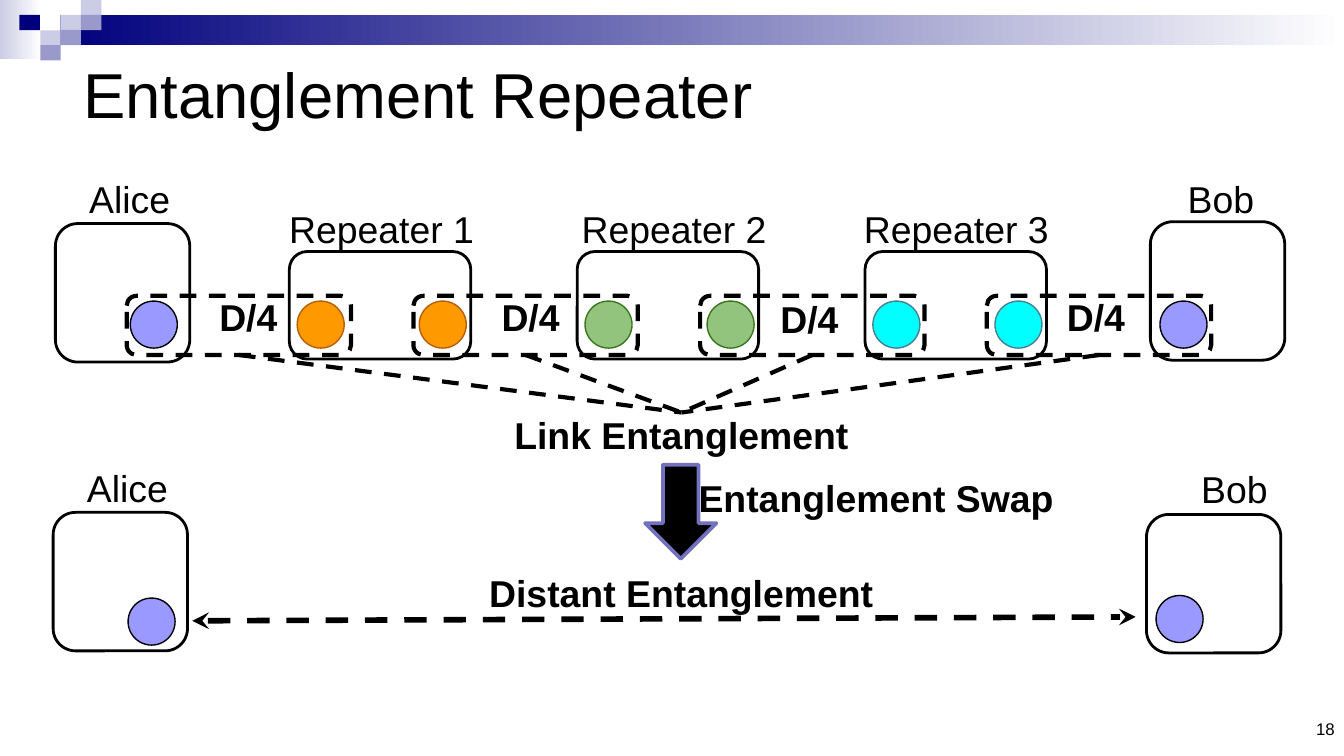
from lxml import etree
from pptx import Presentation
from pptx.dml.color import RGBColor
from pptx.enum.dml import MSO_LINE
from pptx.enum.shapes import MSO_CONNECTOR, MSO_SHAPE
from pptx.enum.text import MSO_ANCHOR, PP_ALIGN
from pptx.oxml.ns import qn
from pptx.util import Pt

RECTANGLE, ROUNDED = MSO_SHAPE.RECTANGLE, MSO_SHAPE.ROUNDED_RECTANGLE
OVAL, DOWN_ARROW = MSO_SHAPE.OVAL, MSO_SHAPE.DOWN_ARROW
STRAIGHT, DASH = MSO_CONNECTOR.STRAIGHT, MSO_LINE.DASH
LEFT, CENTER, RIGHT = PP_ALIGN.LEFT, PP_ALIGN.CENTER, PP_ALIGN.RIGHT
TOP, MIDDLE, BOTTOM = MSO_ANCHOR.TOP, MSO_ANCHOR.MIDDLE, MSO_ANCHOR.BOTTOM

BLACK = RGBColor(0x00, 0x00, 0x00)
WHITE = RGBColor(0xFF, 0xFF, 0xFF)
NAVY = RGBColor(0x00, 0x00, 0x7D)
LAVENDER = RGBColor(0xCC, 0xCC, 0xE6)
SLATE = RGBColor(0x99, 0x99, 0xCC)
ARROW_EDGE = RGBColor(0x71, 0x71, 0xBD)
PERIWINKLE = RGBColor(0x99, 0x99, 0xFF)
ORANGE, BROWN = RGBColor(0xFF, 0x99, 0x00), RGBColor(0xB4, 0x5F, 0x06)
GREEN, DARK_GREEN = RGBColor(0x93, 0xC4, 0x7D), RGBColor(0x38, 0x76, 0x1D)
CYAN, TEAL = RGBColor(0x00, 0xFF, 0xFF), RGBColor(0x45, 0x81, 0x8E)

QUBIT = 25.2
QUBIT_TOP = 161.3


class SlideBuilder:
    font_name = "Arial"

    def __init__(self, slide):
        self.slide = slide

    def set_text(self, shape, text, size, align, anchor, insets, bold=False):
        frame = shape.text_frame
        frame.word_wrap = True
        frame.vertical_anchor = anchor
        (frame.margin_left, frame.margin_top,
         frame.margin_right, frame.margin_bottom) = map(Pt, insets)
        paragraph = frame.paragraphs[0]
        paragraph.text = text
        paragraph.alignment = align
        paragraph.font.name = self.font_name
        paragraph.font.size = Pt(size)
        paragraph.font.bold = bold
        paragraph.font.color.rgb = BLACK

    def title(self, text, left, top, width, height):
        shape = self.slide.shapes.title
        shape.left, shape.top = Pt(left), Pt(top)
        shape.width, shape.height = Pt(width), Pt(height)
        self.set_text(shape, text, 34, LEFT, MIDDLE, (5, 3, 5, 3))

    def label(self, text, left, top, width, height=38.9, size=20, bold=False,
              align=CENTER, anchor=TOP, insets=(7.2, 7.2, 7.2, 7.2)):
        box = self.slide.shapes.add_textbox(Pt(left), Pt(top), Pt(width), Pt(height))
        self.set_text(box, text, size, align, anchor, insets, bold)
        return box

    def shape(self, kind, left, top, width, height, fill=None, line=None,
              line_width=1.5, dash=None):
        shape = self.slide.shapes.add_shape(
            kind, Pt(left), Pt(top), Pt(width), Pt(height))
        shape.shadow.inherit = False
        if fill is None:
            shape.fill.background()
        else:
            shape.fill.solid()
            shape.fill.fore_color.rgb = fill
        if line is None:
            shape.line.fill.background()
        else:
            shape.line.color.rgb = line
            shape.line.width = Pt(line_width)
            shape.line.dash_style = dash
        return shape

    def gradient_bar(self, left, top, width, height, start, end):
        fill = self.shape(RECTANGLE, left, top, width, height).fill
        fill.gradient()
        fill.gradient_angle = 0
        for stop, color, position in zip(fill.gradient_stops, (start, end), (0, 1)):
            stop.color.rgb = color
            stop.position = position

    def qubit(self, left, top, fill=PERIWINKLE, line=BLACK):
        self.shape(OVAL, left, top, QUBIT, QUBIT, fill, line, 0.75)

    def station(self, left, top):
        self.shape(ROUNDED, left, top, 72, 74.2, line=BLACK)

    def dashed_line(self, start=(0, 0), end=(0, 0), width=2.25, arrows=False):
        connector = self.slide.shapes.add_connector(
            STRAIGHT, *map(Pt, start + end))
        connector.line.color.rgb = BLACK
        connector.line.width = Pt(width)
        connector.line.dash_style = DASH
        properties = connector.element.spPr
        if arrows:
            for tag in ("a:headEnd", "a:tailEnd"):
                etree.SubElement(properties.find(qn("a:ln")), qn(tag), type="stealth")
        etree.SubElement(properties, qn("a:effectLst"))
        return connector


def main():
    presentation = Presentation()
    presentation.slide_width, presentation.slide_height = Pt(720), Pt(405)
    slide = presentation.slides.add_slide(presentation.slide_layouts[5])
    builder = SlideBuilder(slide)

    # Header band and its squares
    builder.gradient_bar(0, 0, 22.3, 31.7, LAVENDER, WHITE)
    builder.gradient_bar(32.4, 8, 687.6, 16.2, NAVY, WHITE)
    for left, top, color in (
            (32.4, 8, LAVENDER), (43.4, 0, LAVENDER), (43.4, 8, SLATE),
            (21.6, 16.2, LAVENDER), (10.4, 8, NAVY), (32.4, 16, SLATE),
            (21.6, 24.2, SLATE)):
        builder.shape(RECTANGLE, left, top, 11, 8.2, color)

    # Title and page number
    builder.title("Entanglement Repeater", 39.6, 21, 648, 58)
    builder.label("18", 597.6, 381.6, 122.4, 17.3, size=9, align=RIGHT,
                  anchor=BOTTOM, insets=(5, 3, 5, 3))

    # End stations, before and after the swap
    for name, label_left, label_top, label_width, left, top, qubit_left, qubit_top in (
            ("Alice", 25.2, 87.1, 88.6, 29.7, 119.8, 69.8, QUBIT_TOP),
            ("Bob", 616.3, 87.1, 75.6, 616.3, 118.8, 621.4, QUBIT_TOP),
            ("Alice", 29.8, 242.2, 77, 28.5, 274.5, 68.6, 320.4),
            ("Bob", 630.7, 242.4, 61.2, 614.2, 275.6, 619.3, 319)):
        builder.station(left, top)
        builder.qubit(qubit_left, qubit_top)
        builder.label(name, label_left, label_top, label_width)

    # Repeaters, each with two qubits
    repeaters = ((204.5, ORANGE, BROWN), (361.2, GREEN, DARK_GREEN), (512.4, CYAN, TEAL))
    for index, (label_center, fill, line) in enumerate(repeaters):
        left = 155 + 154.2 * index
        builder.shape(ROUNDED, left, 134.8, 97.2, 57.6, line=BLACK)
        for offset in (4.2, 69.6):
            builder.qubit(left + offset, QUBIT_TOP, fill, line)
        builder.label(f"Repeater {index + 1}", label_center - 69, 103, 138)

    # Links between neighbours, joined to their shared caption
    caption = builder.label("Link Entanglement", 221.8, 221, 286.6, 31.7, bold=True,
                            insets=(7.2, 0, 7.2, 7.2))
    for index, distance_left in enumerate((110.4, 261.6, 411, 564.5)):
        link = builder.shape(ROUNDED, 67.9 + 153.6 * index, 158.5, 120.2, 31.7,
                             line=BLACK, line_width=2.25, dash=DASH)
        connector = builder.dashed_line()
        connector.begin_connect(link, 2)
        connector.end_connect(caption, 0)
        builder.label("D/4", distance_left, 151.5 if index == 2 else 150.5, 50,
                      bold=True, align=LEFT)

    # Swap and resulting distant entanglement
    builder.shape(DOWN_ARROW, 345.6, 249, 38.2, 50.4, BLACK, ARROW_EDGE, 2)
    builder.label("Entanglement Swap", 316.1, 247.3, 306.7, bold=True)
    builder.label("Distant Entanglement", 211.7, 298.4, 306.7, bold=True)
    builder.dashed_line((103, 332.6), (608.4, 330.5), 3, arrows=True)

    presentation.save("out.pptx")


if __name__ == "__main__":
    main()
